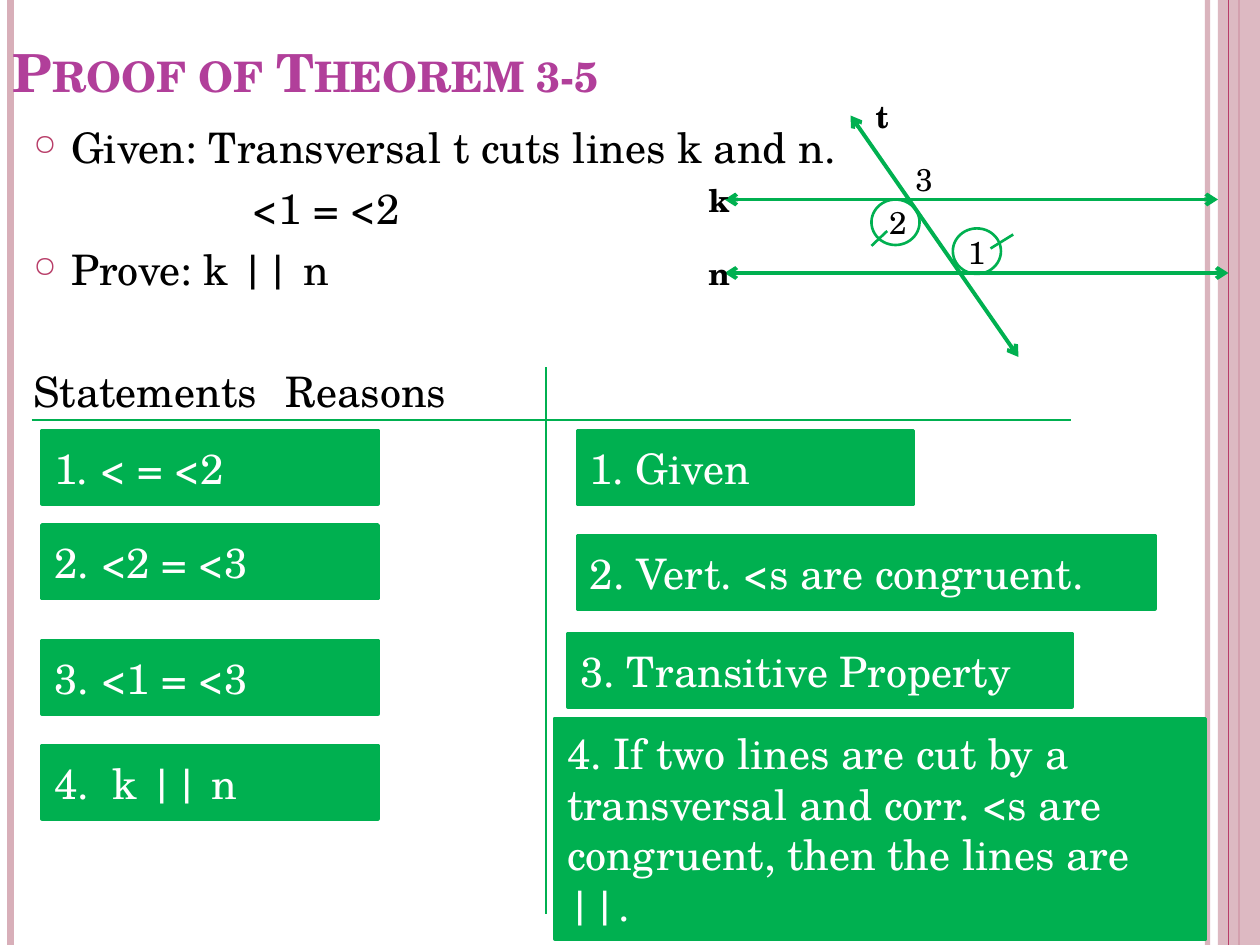
from pptx import Presentation
from pptx.dml.color import RGBColor
from pptx.enum.shapes import MSO_CONNECTOR as Connector, MSO_SHAPE as Shape
from pptx.enum.text import MSO_ANCHOR as Anchor, PP_ALIGN as Align
from pptx.oxml.ns import qn
from pptx.util import Pt
from lxml.etree import SubElement

FONT = "TeX Gyre Schola"
GREEN = RGBColor(0x00, 0xB0, 0x50)
ROSE = RGBColor(0xD8, 0xAF, 0xB9)
CRIMSON = RGBColor(0xB8, 0x3D, 0x68)
PURPLE = RGBColor(0xB1, 0x3F, 0x9A)
BLACK = RGBColor(0x00, 0x00, 0x00)
WHITE = RGBColor(0xFF, 0xFF, 0xFF)

EDGE_LINES = [(690, ROSE, 3, 93), (6, ROSE, 4.5, 100), (708, CRIMSON, 1.5, 100)]
STATEMENTS = [
    ("1. < = <2", 246),
    ("2. <2 = <3", 300),
    ("3. <1 = <3", 366),
    ("4.  k || n", 426),
]
REASONS = [
    ("1. Given", 330, 246, 192, 42),
    ("2. Vert. <s are congruent.", 330, 306, 330, 42),
    ("3. Transitive Property", 324.5, 362, 288, 42),
    ("4. If two lines are cut by a transversal and corr. <s are congruent, "
     "then the lines are ||.", 317, 410.5, 372, 126),
]
BODY = [
    ("Given: Transversal t cuts lines k and n.", 21.6, 6, True),
    ("<1 = <2", 125.5, 6, False),
    ("Prove: k || n", 21.6, 6, True),
    ("Statements\tReasons", 0, 41, False),
]
REASONS_TAB = 452.5
ARROWS = [(414, 156, 702, 156), (414, 114, 696, 114), (486, 66, 582, 204)]
LABELS = [
    ("k", 396, 102, 30, True),
    ("n", 396, 144, 30, True),
    ("t", 492, 54, 24, True),
    ("1", 546, 132, 24, False),
    ("2", 501, 115, 24, False),
    ("3", 516, 90, 18, False),
]
ANGLE_CIRCLES = [(498, 114), (544.5, 130.5)]
ANGLE_TICKS = [(498, 140.5, 507, 132), (566, 142, 579, 134)]


def set_alpha(fill_parent, percent):
    """Make the solid colour below an element partly transparent."""
    color = next(fill_parent.iter(qn("a:srgbClr")))
    SubElement(color, qn("a:alpha"), val=str(percent * 1000))


def add_line(slide, points, color, width, alpha=100, arrows=False):
    """Draw a straight line, with open arrowheads at both ends if wanted."""
    line = slide.shapes.add_connector(Connector.STRAIGHT, *map(Pt, points))
    line.line.color.rgb = color
    line.line.width = Pt(width)
    properties = line._element.spPr
    outline = properties.find(qn("a:ln"))
    if alpha < 100:
        set_alpha(outline, alpha)
    if arrows:
        SubElement(outline, qn("a:headEnd"), type="arrow")
        SubElement(outline, qn("a:tailEnd"), type="arrow")
    SubElement(properties, qn("a:effectLst"))


def add_figure(slide, kind, box, fill=None, outline=None, width=2):
    """Add a preset shape without shadow."""
    shape = slide.shapes.add_shape(kind, *map(Pt, box))
    shape.shadow.inherit = False
    if fill is None:
        shape.fill.background()
    else:
        shape.fill.solid()
        shape.fill.fore_color.rgb = fill
    if outline is None:
        shape.line.fill.background()
    else:
        shape.line.color.rgb = outline
        shape.line.width = Pt(width)
    return shape


def style_runs(paragraph, size, color, bold=False):
    """Give every run of a paragraph its font."""
    for run in paragraph.runs:
        run.font.name = FONT
        run.font.size = Pt(size)
        run.font.bold = bold
        run.font.color.rgb = color


def write(shape, text, size, color, bold=False, align=Align.LEFT, anchor=Anchor.MIDDLE):
    """Put one wrapped paragraph into a shape and return it."""
    frame = shape.text_frame
    frame.word_wrap = True
    frame.vertical_anchor = anchor
    frame.text = text
    paragraph = frame.paragraphs[0]
    paragraph.alignment = align
    style_runs(paragraph, size, color, bold)
    return paragraph


def add_text(slide, box, text, size, color, **style):
    """Add a text box with one paragraph and return the paragraph."""
    shape = slide.shapes.add_textbox(*map(Pt, box))
    return write(shape, text, size, color, **style)


def add_edges(slide):
    """Draw the coloured stripes along the slide edges."""
    for x, color, width, alpha in EDGE_LINES:
        add_line(slide, (x, 0, x, 540), color, width, alpha)
    band = add_figure(slide, Shape.RECTANGLE, (696, 0, 24, 540), ROSE)
    set_alpha(band._element.spPr, 87)
    add_line(slide, (702, 0, 702, 540), CRIMSON, 0.75)


def add_title(slide):
    """Write the heading in small capitals."""
    paragraph = add_text(slide, (0, 0, 588, 62.5), "Proof of Theorem 3-5", 30, PURPLE,
                         bold=True, anchor=Anchor.BOTTOM)
    paragraph.runs[0]._r.get_or_add_rPr().set("cap", "small")


def add_body(slide):
    """Write the given facts, the claim and the column headings."""
    frame = slide.shapes.add_textbox(Pt(12), Pt(66), Pt(666), Pt(384)).text_frame
    frame.word_wrap = True
    for index, (text, margin, space, bulleted) in enumerate(BODY):
        paragraph = frame.add_paragraph() if index else frame.paragraphs[0]
        paragraph.text = text
        paragraph.space_before = Pt(space)
        style_runs(paragraph, 24, BLACK)
        properties = paragraph._p.get_or_add_pPr()
        properties.set("marL", str(Pt(margin)))
        properties.set("indent", str(Pt(-margin if bulleted else 0)))
        if bulleted:
            color = SubElement(properties, qn("a:buClr"))
            SubElement(color, qn("a:srgbClr"), val=str(CRIMSON))
            SubElement(properties, qn("a:buSzPct"), val="70000")
            SubElement(properties, qn("a:buChar"), char="○")
        if "\t" in text:
            tabs = SubElement(properties, qn("a:tabLst"))
            SubElement(tabs, qn("a:tab"), pos=str(Pt(REASONS_TAB)), algn="l")


def add_proof(slide):
    """Draw the two-column proof with its filled steps."""
    add_line(slide, (18, 240, 612, 240), GREEN, 1)
    add_line(slide, (312, 210, 312, 522), GREEN, 1)
    steps = [(text, 24, top, 192, 42) for text, top in STATEMENTS] + REASONS
    for text, *box in steps:
        step = add_figure(slide, Shape.RECTANGLE, box, GREEN, GREEN)
        write(step, text, 24, WHITE)


def add_diagram(slide):
    """Draw the two lines cut by the transversal and mark the angles."""
    for points in ARROWS:
        add_line(slide, points, GREEN, 2.25, arrows=True)
    for text, left, top, width, bold in LABELS:
        add_text(slide, (left, top, width, 24), text, 18, BLACK, bold=bold, align=Align.CENTER)
    for left, top in ANGLE_CIRCLES:
        add_figure(slide, Shape.OVAL, (left, top, 27.5, 26), outline=GREEN, width=1.5)
    for points in ANGLE_TICKS:
        add_line(slide, points, GREEN, 1.5)


def main():
    """Build the proof slide and save it."""
    presentation = Presentation()
    presentation.slide_width, presentation.slide_height = Pt(720), Pt(540)
    slide = presentation.slides.add_slide(presentation.slide_layouts[6])
    add_edges(slide)
    add_title(slide)
    add_body(slide)
    add_proof(slide)
    add_diagram(slide)
    presentation.save("out.pptx")


if __name__ == "__main__":
    main()
